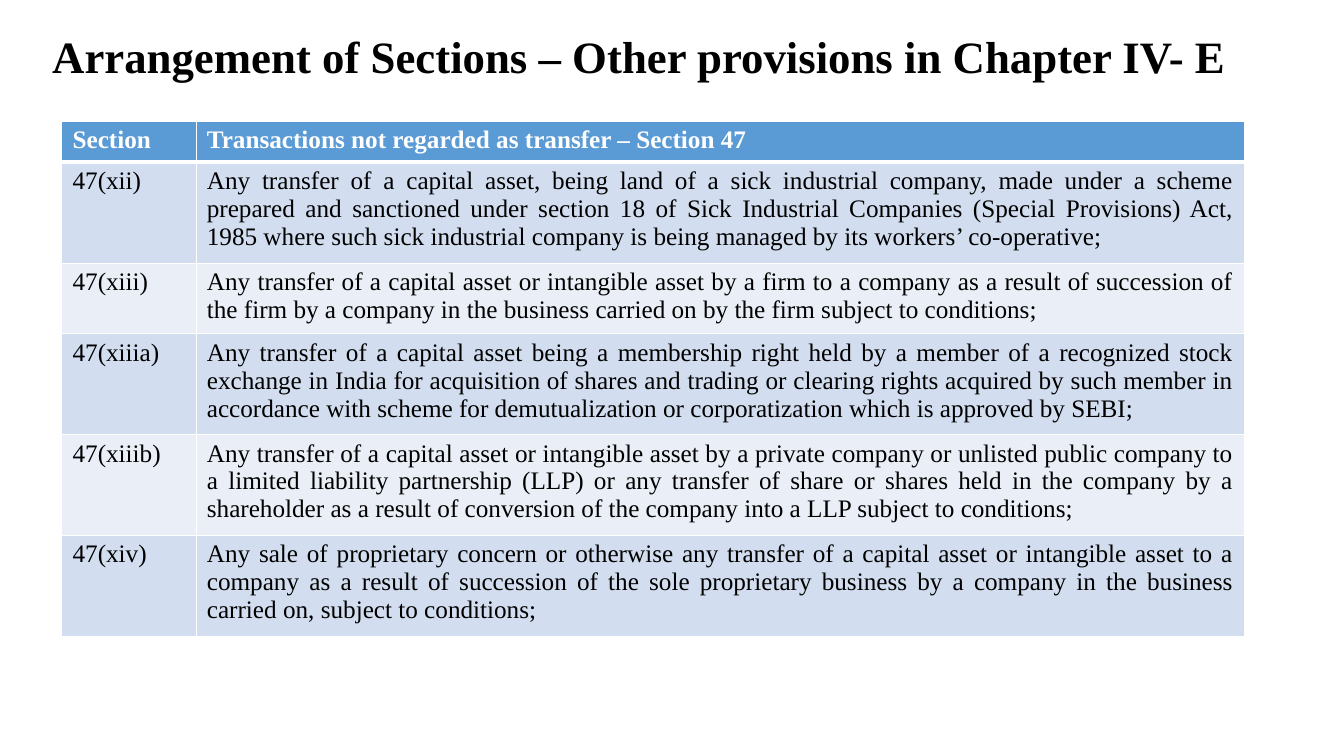
import pptx
import pptx.util
import pptx.dml.color
import pptx.enum.text
import pptx.oxml
import pptx.oxml.ns

Pt = pptx.util.Pt
ALIGN = pptx.enum.text.PP_ALIGN

# Content
TITLE = "Arrangement of Sections – Other provisions in Chapter IV- E"
ROWS = [
    ("Section", "Transactions not regarded as transfer – Section 47"),
    ("47(xii)",
     "Any transfer of a capital asset, being land of a sick industrial company, made under a scheme "
     "prepared and sanctioned under section 18 of Sick Industrial Companies (Special Provisions) Act, "
     "1985 where such sick industrial company is being managed by its workers’ co-operative;"),
    ("47(xiii)",
     "Any transfer of a capital asset or intangible asset by a firm to a company as a result of "
     "succession of the firm by a company in the business carried on by the firm subject to conditions;"),
    ("47(xiiia)",
     "Any transfer of a capital asset being a membership right held by a member of a recognized stock "
     "exchange in India for acquisition of shares and trading or clearing rights acquired by such member "
     "in accordance with scheme for demutualization or corporatization which is approved by SEBI;"),
    ("47(xiiib)",
     "Any transfer of a capital asset or intangible asset by a private company or unlisted public company "
     "to a limited liability partnership (LLP) or any transfer of share or shares held in the company by a "
     "shareholder as a result of conversion of the company into a LLP subject to conditions;"),
    ("47(xiv)",
     "Any sale of proprietary concern or otherwise any transfer of a capital asset or intangible asset to "
     "a company as a result of succession of the sole proprietary business by a company in the business "
     "carried on, subject to conditions;"),
]

THEME = {
    "font": "Times New Roman", "title_size": 32, "table_size": 18,
    "text": "000000", "header_text": "FFFFFF", "header_fill": "5B9BD5",
    "bands": ("D2DEEF", "EAEFF7"), "rule": "FFFFFF", "thin": 1, "thick": 3,
}

# Layout, in points
SLIDE = (960, 540)
TITLE_BOX = (30.2, 7.9, 858.2, 68.4)
TABLE_POS = (44.2, 86.7)
COLUMNS = (95.9, 748.8)
ROW_HEIGHT = 29.2  # rows grow to fit their text


def color(value):
    return pptx.dml.color.RGBColor.from_string(value)


def style(p, size, text_color, bold):
    for r in p.runs:
        r.font.name = THEME["font"]
        r.font.size = Pt(size)
        r.font.bold = bold
        r.font.color.rgb = color(text_color)


def set_borders(cell, top, bottom):
    widths = {"L": THEME["thin"], "R": THEME["thin"], "T": top, "B": bottom}
    tc_pr = cell._tc.get_or_add_tcPr()
    for i, (side, width) in enumerate(widths.items()):
        line = pptx.oxml.parse_xml(
            f'<a:ln{side} {pptx.oxml.ns.nsdecls("a")} w="{Pt(width)}"><a:solidFill>'
            f'<a:srgbClr val="{THEME["rule"]}"/></a:solidFill></a:ln{side}>')
        tc_pr.insert(i, line)


prs = pptx.Presentation()
prs.slide_width, prs.slide_height = map(Pt, SLIDE)
s = prs.slides.add_slide(prs.slide_layouts[6])

# Title
tf = s.shapes.add_textbox(*map(Pt, TITLE_BOX)).text_frame
tf.word_wrap = True
tf.vertical_anchor = pptx.enum.text.MSO_ANCHOR.MIDDLE
tf.text = TITLE
p = tf.paragraphs[0]
p.line_spacing = 0.9
style(p, THEME["title_size"], THEME["text"], True)

# Table
size = (sum(COLUMNS), ROW_HEIGHT * len(ROWS))
table = s.shapes.add_table(len(ROWS), len(COLUMNS), *map(Pt, TABLE_POS + size)).table
for column, width in zip(table.columns, COLUMNS):
    column.width = Pt(width)

for i, row in enumerate(ROWS):
    header = i == 0
    fill = THEME["header_fill"] if header else THEME["bands"][(i - 1) % 2]
    text_color = THEME["header_text"] if header else THEME["text"]
    top = THEME["thick"] if i == 1 else THEME["thin"]
    bottom = THEME["thick"] if header else THEME["thin"]
    for j, text in enumerate(row):
        cell = table.cell(i, j)
        cell.fill.solid()
        cell.fill.fore_color.rgb = color(fill)
        set_borders(cell, top, bottom)
        cell.margin_left = cell.margin_right = Pt(7.7)
        cell.text_frame.text = text
        p = cell.text_frame.paragraphs[0]
        if j == 1 and not header:
            p.alignment = ALIGN.JUSTIFY
        style(p, THEME["table_size"], text_color, header)

prs.save("out.pptx")
